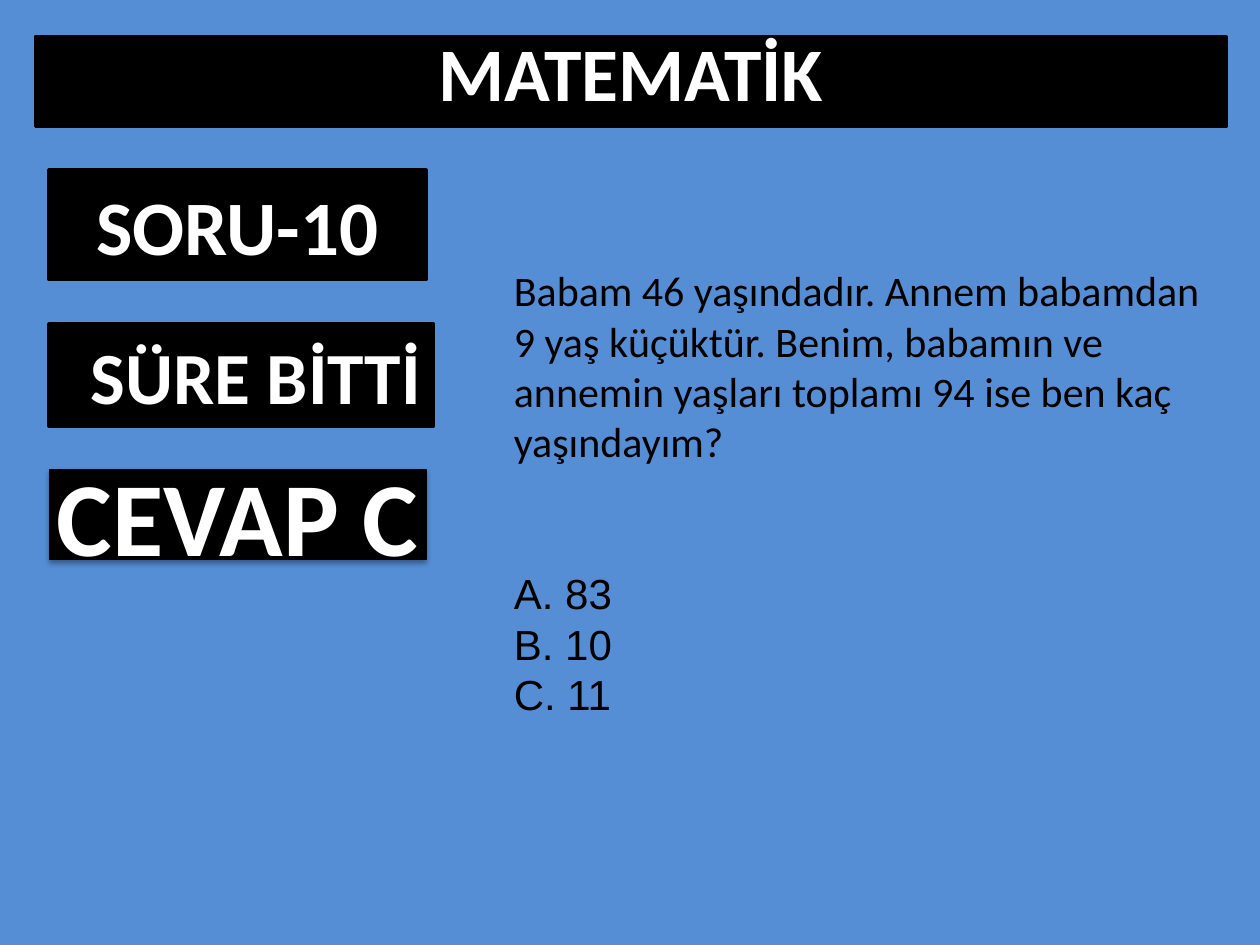
import pptx
import pptx.util
import pptx.dml.color
import pptx.enum.shapes
import pptx.enum.text
import lxml.etree
from pptx.oxml.ns import qn

WIDTH, HEIGHT = 10, 7.5
COLORS = {"background": "558ED5", "box": "000000", "light": "FFFFFF", "dark": "000000"}
LEFT_COLUMN = 0.039
ANCHOR = pptx.enum.text.MSO_ANCHOR
ALIGN = pptx.enum.text.PP_ALIGN


def color(name):
    return pptx.dml.color.RGBColor.from_string(COLORS[name])


def place(shape, left, top, width, height):
    shape.left = pptx.util.Inches(left * WIDTH)
    shape.top = pptx.util.Inches(top * HEIGHT)
    shape.width = pptx.util.Inches(width * WIDTH)
    shape.height = pptx.util.Inches(height * HEIGHT)


def format_font(paragraph, size, name, color_name, bold=False):
    font = paragraph.font
    font.size = pptx.util.Pt(size)
    font.name = name
    font.bold = bold
    font.color.rgb = color(color_name)


def format_box(shape, text, size, line_width=2, anchor=ANCHOR.MIDDLE, wrap=True):
    shape.fill.solid()
    shape.fill.fore_color.rgb = color("box")
    shape.line.color.rgb = color("box")
    shape.line.width = pptx.util.Pt(line_width)
    frame = shape.text_frame
    frame.text = text
    frame.auto_size = pptx.enum.text.MSO_AUTO_SIZE.NONE
    frame.vertical_anchor = anchor
    frame.word_wrap = wrap
    paragraph = frame.paragraphs[0]
    paragraph.alignment = ALIGN.CENTER
    format_font(paragraph, size, "Calibri", "light", bold=True)


def add_title(slide, text):
    title = slide.shapes.title
    place(title, 0.028, 0.039, 0.945, 0.095)
    format_box(title, text, 43.2, anchor=ANCHOR.TOP)
    title.text_frame.paragraphs[0].line_spacing = 0.8


def add_label(slide, text, size, top, width, height, line_width=2, wrap=True):
    shape = slide.shapes.add_shape(pptx.enum.shapes.MSO_SHAPE.RECTANGLE, 0, 0, 0, 0)
    place(shape, LEFT_COLUMN, top, width, height)
    shape.shadow.inherit = False
    format_box(shape, text, size, line_width, wrap=wrap)
    return shape


def add_shadow(shape):
    effects = shape._element.spPr.find(qn("a:effectLst"))
    shadow = lxml.etree.SubElement(
        effects, qn("a:outerShdw"),
        blurRad=str(pptx.util.Pt(3.1)), dist=str(pptx.util.Pt(1.8)),
        dir="5400000", rotWithShape="0")
    shade = lxml.etree.SubElement(shadow, qn("a:srgbClr"), val=COLORS["box"])
    lxml.etree.SubElement(shade, qn("a:alpha"), val="35000")


def add_question(slide, question, answers):
    box = slide.shapes.add_textbox(0, 0, 0, 0)
    place(box, 0.398, 0.271, 0.578, 0.499)
    frame = box.text_frame
    frame.word_wrap = True
    frame.vertical_anchor = ANCHOR.MIDDLE
    frame.text = "\n".join([question, *answers])
    for paragraph in frame.paragraphs:
        format_font(paragraph, 24, "Arial", "dark")
    frame.paragraphs[0].font.name = "Calibri"
    frame.paragraphs[1].space_before = pptx.util.Pt(58)


def main():
    presentation = pptx.Presentation()
    presentation.slide_width = pptx.util.Inches(WIDTH)
    presentation.slide_height = pptx.util.Inches(HEIGHT)
    slide = presentation.slides.add_slide(presentation.slide_layouts.get_by_name("Title Only"))
    slide.background.fill.solid()
    slide.background.fill.fore_color.rgb = color("background")

    add_title(slide, "MATEMATİK")
    add_label(slide, "SORU-10", 44, 0.18, 0.299, 0.116)
    time_label = add_label(slide, "SÜRE BİTTİ", 42, 0.343, 0.305, 0.108, wrap=False)
    time_label.text_frame.margin_left = pptx.util.Inches(0.33)
    answer_label = add_label(slide, "CEVAP C", 60, 0.497, 0.299, 0.095, line_width=0.75, wrap=False)
    add_shadow(answer_label)
    add_question(
        slide,
        "Babam 46 yaşındadır. Annem babamdan 9 yaş küçüktür. Benim, babamın ve "
        "annemin yaşları toplamı 94 ise ben kaç yaşındayım?",
        ["A. 83", "B. 10", "C. 11"])
    presentation.save("out.pptx")


if __name__ == "__main__":
    main()
